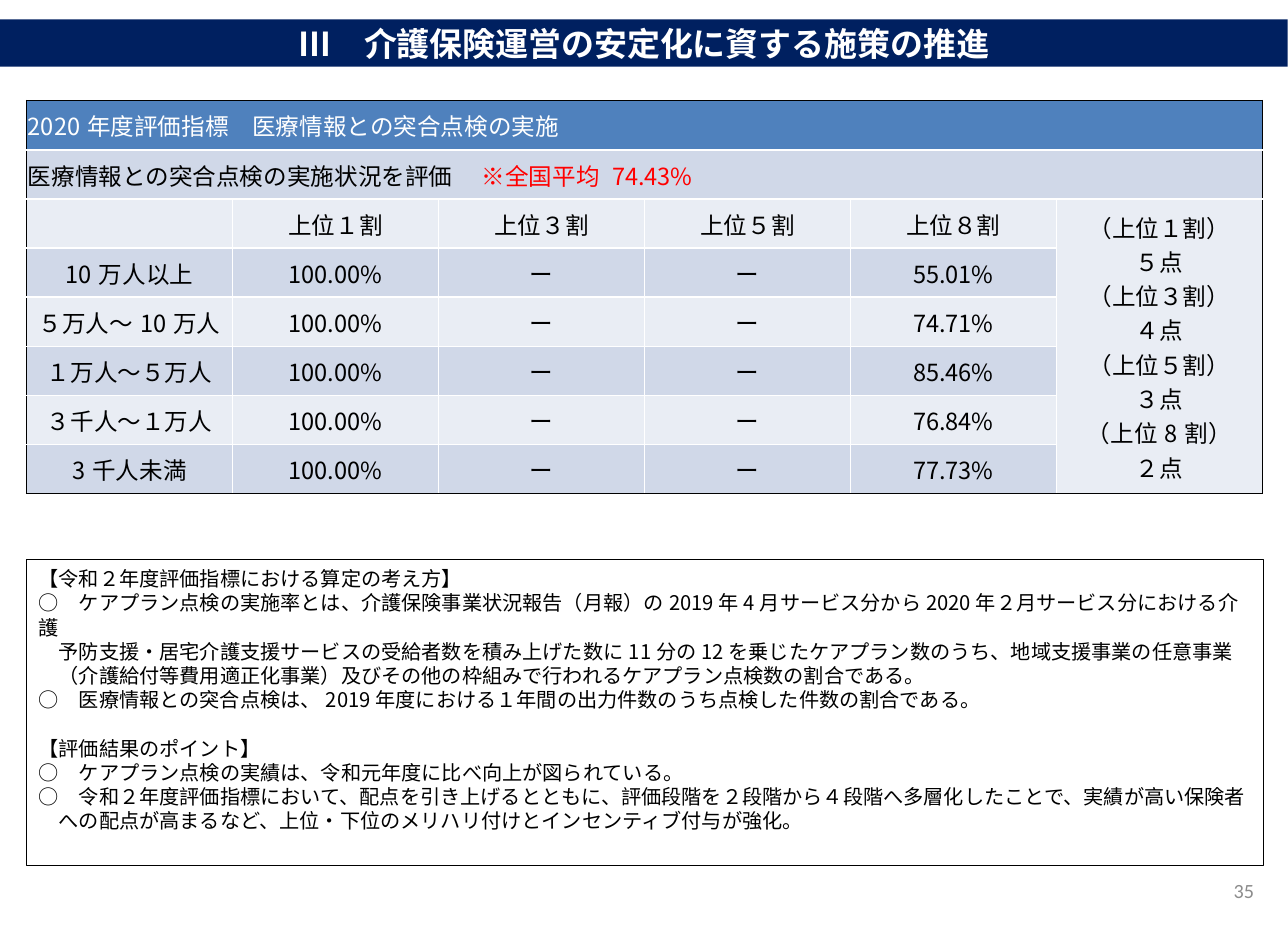
from lxml import etree
from pptx import Presentation
from pptx import util as u
from pptx.dml.color import RGBColor
from pptx.enum import shapes, text
from pptx.oxml import ns

SANS, LATIN = "Noto Sans CJK JP", "Calibri"
CENTER, LEFT, RIGHT = text.PP_ALIGN.CENTER, text.PP_ALIGN.LEFT, text.PP_ALIGN.RIGHT
BANDS = ("E9EDF4", "D0D8E8")
DASH = "ー"
POPULATION_RATES = [
    ("10万人以上", "55.01%"),
    ("５万人～10万人", "74.71%"),
    ("１万人～５万人", "85.46%"),
    ("３千人～１万人", "76.84%"),
    ("3千人未満", "77.73%"),
]
SCORES = [("１", "５"), ("３", "４"), ("５", "３"), ("8", "２")]
METHOD = [
    "【令和２年度評価指標における算定の考え方】",
    "○　ケアプラン点検の実施率とは、介護保険事業状況報告（月報）の2019年4月サービス分から2020年２月サービス分における介護",
    "　予防支援・居宅介護支援サービスの受給者数を積み上げた数に11分の12を乗じたケアプラン数のうち、地域支援事業の任意事業",
    "　（介護給付等費用適正化事業）及びその他の枠組みで行われるケアプラン点検数の割合である。",
    "○　医療情報との突合点検は、2019年度における１年間の出力件数のうち点検した件数の割合である。",
]
POINTS = [
    "【評価結果のポイント】",
    "○　ケアプラン点検の実績は、令和元年度に比べ向上が図られている。",
    "○　令和２年度評価指標において、配点を引き上げるとともに、評価段階を２段階から４段階へ多層化したことで、実績が高い保険者",
    "　への配点が高まるなど、上位・下位のメリハリ付けとインセンティブ付与が強化。",
]


def color(value):
    """Return the colour for a hex string."""
    return RGBColor.from_string(value)


def apply(target, values):
    """Set every attribute of a dict on an object."""
    for name, value in values.items():
        setattr(target, name, value)


def add_span(para, words, ink="000000", face=SANS, **font):
    """Append one formatted run to a paragraph."""
    span = para.add_run()
    span.text = words
    apply(span.font, {"name": face, **font})
    span.font.color.rgb = color(ink)
    east = etree.SubElement(span.font._element, ns.qn("a:ea"))
    east.set("typeface", SANS)


def write(frame, lines, align=LEFT, spacing=None, **font):
    """Write one paragraph per line into a text frame."""
    for index, line in enumerate(lines):
        para = frame.add_paragraph() if index else frame.paragraphs[0]
        para.alignment = align
        if spacing:
            para.line_spacing = spacing
        add_span(para, line, **font)


def add_panel(page, box, fill=None, line=None):
    """Add a rectangle without shadow and return it."""
    panel = page.shapes.add_shape(shapes.MSO_SHAPE.RECTANGLE, *map(u.Inches, box))
    panel.shadow.inherit = False
    if fill:
        panel.fill.solid()
        panel.fill.fore_color.rgb = color(fill)
    else:
        panel.fill.background()
    if line:
        panel.line.color.rgb = color(line)
        panel.line.width = u.Pt(1)
    else:
        panel.line.fill.background()
    panel.text_frame.word_wrap = True
    return panel


def add_title(page, box):
    """Add the heading bar."""
    frame = add_panel(page, box, fill="002060").text_frame
    frame.vertical_anchor = text.MSO_ANCHOR.MIDDLE
    write(frame, ["Ⅲ　介護保険運営の安定化に資する施策の推進"], CENTER,
          ink="FFFFFF", face=LATIN, size=u.Pt(19.6), bold=True)


def set_borders(cell, edges):
    """Draw the left, right, top and bottom borders of a cell."""
    properties = cell._tc.get_or_add_tcPr()
    for index, (side, (ink, width)) in enumerate(zip("LRTB", edges)):
        line = etree.Element(ns.qn("a:ln" + side), w=str(u.Pt(width)))
        fill = etree.SubElement(line, ns.qn("a:solidFill"))
        etree.SubElement(fill, ns.qn("a:srgbClr"), val=ink)
        properties.insert(index, line)


def style_cell(cell, row, column, rows, columns):
    """Fill a cell, set its insets and outline the table's outer edges."""
    inset = u.Inches(0.01)
    apply(cell, {"margin_left": inset, "margin_right": inset, "margin_top": inset,
                 "margin_bottom": 0, "vertical_anchor": text.MSO_ANCHOR.MIDDLE})
    cell.fill.solid()
    cell.fill.fore_color.rgb = color(BANDS[row % 2] if row else "4F81BD")
    bottom = row + cell.span_height if cell.is_merge_origin else row + 1
    right = column + cell.span_width if cell.is_merge_origin else column + 1
    outer = (column == 0, right == columns, row == 0, bottom == rows)
    header = (False, False, row == 1, row == 0)
    set_borders(cell, [("000000" if edge else "FFFFFF", 1.5 if thick and not edge else 1)
                       for edge, thick in zip(outer, header)])


def add_rates_table(page, box):
    """Add the table of check rates and scores."""
    rows, columns = len(POPULATION_RATES) + 3, 6
    table = page.shapes.add_table(rows, columns, *map(u.Inches, box)).table
    for column in table.columns:
        column.width = u.Inches(box[2] / columns)
    for row in table.rows:
        row.height = u.Inches(box[3] / rows)
    for row in (0, 1):
        table.cell(row, 0).merge(table.cell(row, columns - 1))
    table.cell(2, columns - 1).merge(table.cell(rows - 1, columns - 1))
    for row in range(rows):
        for column in range(columns):
            style_cell(table.cell(row, column), row, column, rows, columns)

    size = u.Pt(14)
    write(table.cell(0, 0).text_frame, ["2020年度評価指標　医療情報との突合点検の実施"],
          ink="FFFFFF", size=size)
    summary = table.cell(1, 0).text_frame
    write(summary, ["医療情報との突合点検の実施状況を評価 　"], size=size)
    add_span(summary.paragraphs[0], "※全国平均 74.43%", ink="FF0000", size=size)

    grid = [[""] + [f"上位{rank}割" for rank in "１３５８"]]
    grid += [[group, "100.00%", DASH, DASH, rate] for group, rate in POPULATION_RATES]
    for row, values in enumerate(grid, 2):
        for column, value in enumerate(values):
            if value:
                write(table.cell(row, column).text_frame, [value], CENTER, size=size)
    scores = [line for rank, score in SCORES for line in (f"（上位{rank}割）", f"{score}点")]
    write(table.cell(2, columns - 1).text_frame, scores, CENTER, size=size)


def add_notes_panel(page, box):
    """Add the framed explanation below the table."""
    frame = add_panel(page, box, line="000000").text_frame
    apply(frame, {"vertical_anchor": text.MSO_ANCHOR.TOP, "margin_top": u.Inches(0.06)})
    pitch = u.Pt(14.4)
    write(frame, METHOD + POINTS, spacing=pitch, size=u.Pt(12))
    frame.paragraphs[len(METHOD)].space_before = pitch


def add_page_number(page, box):
    """Add the page number."""
    frame = page.shapes.add_textbox(*map(u.Inches, box)).text_frame
    apply(frame, {"word_wrap": True, "vertical_anchor": text.MSO_ANCHOR.MIDDLE})
    write(frame, ["35"], RIGHT, ink="8C8C8C", face=LATIN, size=u.Pt(12))


def main():
    """Build and save the slide."""
    deck = Presentation()
    deck.slide_width = u.Pt(765.5)
    deck.slide_height = u.Pt(553)
    page = deck.slides.add_slide(deck.slide_layouts[6])
    add_title(page, (0, 0.16, 10.63, 0.39))
    add_rates_table(page, (0.22, 0.83, 10.2, 3.25))
    add_page_number(page, (7.97, 7.15, 2.48, 0.41))
    add_notes_panel(page, (0.22, 4.62, 10.21, 2.53))
    deck.save("out.pptx")


if __name__ == "__main__":
    main()
